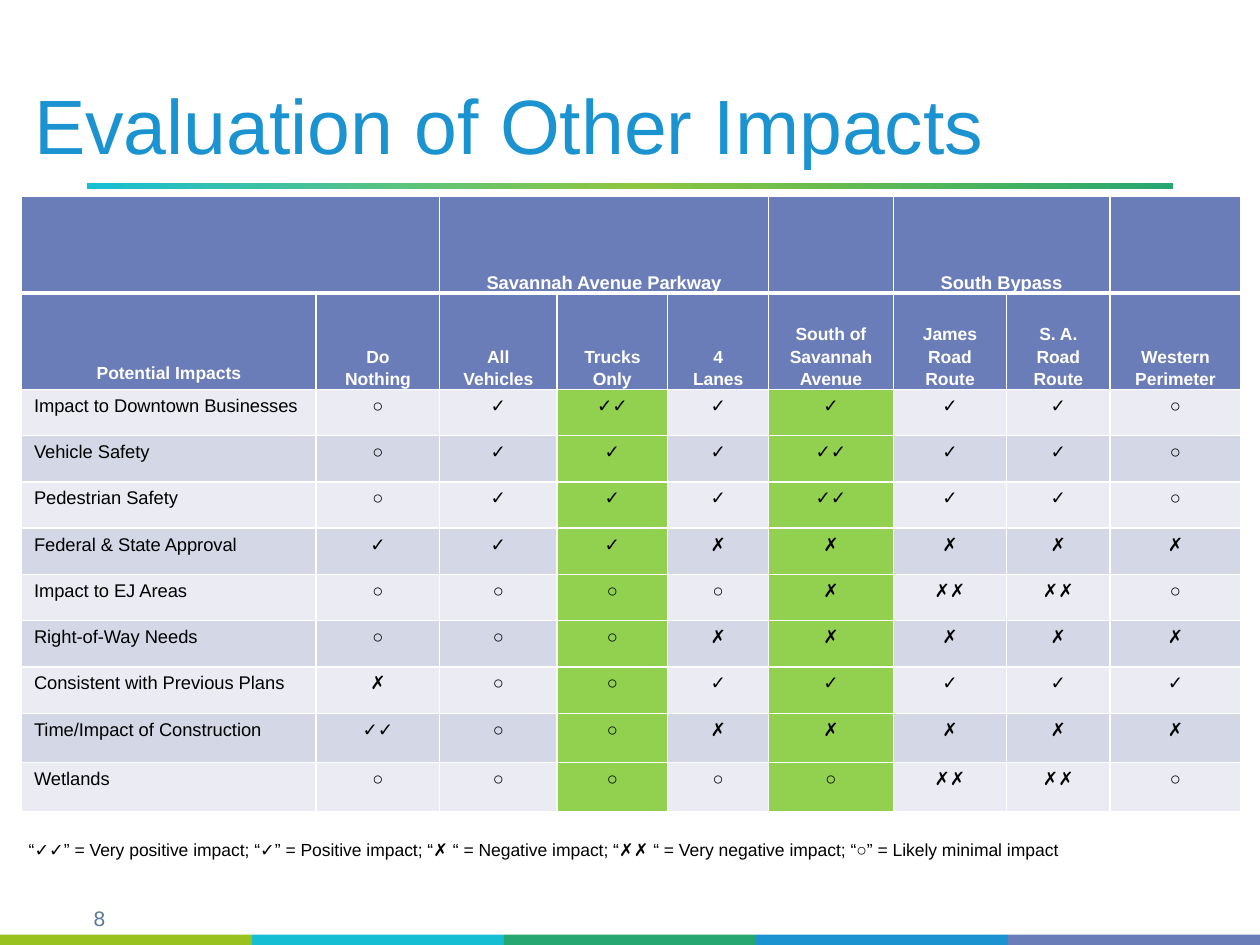
from copy import deepcopy
from dataclasses import dataclass

from pptx import Presentation
from pptx.dml.color import RGBColor
from pptx.enum.shapes import MSO_SHAPE
from pptx.enum.text import MSO_ANCHOR, MSO_AUTO_SIZE, PP_ALIGN
from pptx.oxml import parse_xml
from pptx.oxml.ns import nsdecls, qn
from pptx.util import Inches, Pt

RECTANGLE = MSO_SHAPE.RECTANGLE
TOP, BOTTOM = MSO_ANCHOR.TOP, MSO_ANCHOR.BOTTOM
LEFT, CENTER = PP_ALIGN.LEFT, PP_ALIGN.CENTER
NO_FIT = MSO_AUTO_SIZE.NONE
PAGE_WIDTH, PAGE_HEIGHT = Inches(10), Inches(7.5)


@dataclass(frozen=True)
class Theme:
    font: str = "Arial"
    title: str = "1C93D1"
    header: str = "6B7DB8"
    bands: tuple = ("EBECF3", "D4D7E6")
    highlight: str = "92D050"
    white: str = "FFFFFF"
    ink: str = "000000"
    page_number: str = "597794"
    rule: tuple = ("16BED4", "8DC63F", "26A771")
    footer: tuple = ("98C21F", "16BED4", "26A771", "1C93D1", "6B7DB8")
    title_size: float = 44
    number_size: float = 12
    cell_size: float = 10.5
    small_size: float = 10


THEME = Theme()

# Table grid: column shares of the page width, row shares of its height
COLUMNS = (23.4, 9.8, 9.3, 8.8, 8, 9.9, 9, 8.2, 10.4)
ROWS = (10.2,) * 2 + (4.9,) * 7 + (5.2,) * 2
HIGHLIGHTED = (3, 5)
# First column, last column and text of each cell in the group row
GROUPS = ((0, 1, ""), (2, 4, "Savannah Avenue Parkway"), (5, 5, ""),
          (6, 7, "South Bypass"), (8, 8, ""))
HEADINGS = ("Potential Impacts", "Do Nothing", "All Vehicles", "Trucks Only",
            "4 Lanes", "South of Savannah Avenue", "James Road Route",
            "S. A. Road Route", "Western Perimeter")
RATINGS = {
    "Impact to Downtown Businesses": "○ ✓ ✓✓ ✓ ✓ ✓ ✓ ○",
    "Vehicle Safety": "○ ✓ ✓ ✓ ✓✓ ✓ ✓ ○",
    "Pedestrian Safety": "○ ✓ ✓ ✓ ✓✓ ✓ ✓ ○",
    "Federal & State Approval": "✓ ✓ ✓ ✗ ✗ ✗ ✗ ✗",
    "Impact to EJ Areas": "○ ○ ○ ○ ✗ ✗✗ ✗✗ ○",
    "Right-of-Way Needs": "○ ○ ○ ✗ ✗ ✗ ✗ ✗",
    "Consistent with Previous Plans": "✗ ○ ○ ✓ ✓ ✓ ✓ ✓",
    "Time/Impact of Construction": "✓✓ ○ ○ ✗ ✗ ✗ ✗ ✗",
    "Wetlands": "○ ○ ○ ○ ○ ✗✗ ✗✗ ○",
}
LEGEND = ("“✓✓” = Very positive impact; “✓” = Positive impact; "
          "“✗ “ = Negative impact; “✗✗ “ = Very negative impact; "
          "“○” = Likely minimal impact")


def across(share):
    return round(PAGE_WIDTH * share / 100)


def down(share):
    return round(PAGE_HEIGHT * share / 100)


def area(left, top, width, height):
    """Turn shares of the page (in percent) into a position and size."""
    return across(left), down(top), across(width), down(height)


def apply(target, values):
    for name, value in values.items():
        setattr(target, name, value)


def write(frame, text, size, color, bold=False, align=LEFT, spacing=None):
    para = frame.paragraphs[0]
    apply(para, {"alignment": align, "line_spacing": spacing})
    span = para.add_run()
    span.text = text
    apply(span.font, {"name": THEME.font, "size": Pt(size), "bold": bold})
    span.font.color.rgb = RGBColor.from_string(color)
    return para


def add_title(page, text):
    title = page.shapes.title
    apply(title, dict(zip(("left", "top", "width", "height"),
                          area(1.7, 1.47, 96.8, 17.33))))
    apply(title.text_frame, {"vertical_anchor": BOTTOM, "auto_size": NO_FIT,
                             "word_wrap": True})
    write(title.text_frame, text, THEME.title_size, THEME.title, spacing=0.9)


def add_text(page, place, text, size, color, **layout):
    box = page.shapes.add_textbox(*place)
    box.text_frame.word_wrap = True
    return write(box.text_frame, text, size, color, **layout)


def add_bar(page, place, colors):
    """Draw a bar in one colour, or with an even gradient over several."""
    bar = page.shapes.add_shape(RECTANGLE, *place)
    bar.shadow.inherit = False
    bar.line.fill.background()
    if len(colors) == 1:
        bar.fill.solid()
        bar.fill.fore_color.rgb = RGBColor.from_string(colors[0])
        return
    bar.fill.gradient()
    bar.fill.gradient_angle = 0
    first = next(bar._element.spPr.iter(qn("a:gs")))
    for _ in colors[2:]:
        first.addnext(deepcopy(first))
    for index, (stop, color) in enumerate(zip(bar.fill.gradient_stops, colors)):
        stop.position = index / (len(colors) - 1)
        stop.color.rgb = RGBColor.from_string(color)


def style_cell(cell, fill, widths):
    """Set the fill and the white borders; widths maps a side to points."""
    properties = cell._tc.get_or_add_tcPr()
    for side in "LRTB":
        properties.append(parse_xml(
            f'<a:ln{side} {nsdecls("a")} w="{Pt(widths.get(side, 1))}">'
            f'<a:solidFill><a:srgbClr val="{THEME.white}"/></a:solidFill>'
            f'</a:ln{side}>'))
    cell.fill.solid()
    cell.fill.fore_color.rgb = RGBColor.from_string(fill)


def fill_header(cell, text, size, tight=True):
    """Write a header; tight cells sit on the bottom edge of their row."""
    cell.vertical_anchor = BOTTOM
    if tight:
        apply(cell, {"margin_left": Inches(0.15), "margin_right": Inches(0.15),
                     "margin_top": 0, "margin_bottom": 0})
    if text:
        write(cell.text_frame, text, size, THEME.white, bold=True,
              align=CENTER, spacing=1.15 if tight else None)


def add_impact_table(page):
    frame = page.shapes.add_table(len(ROWS), len(COLUMNS),
                                  *area(1.7, 20.8, sum(COLUMNS), sum(ROWS)))
    table = frame.table
    apply(table, {"first_row": False, "horz_banding": False})
    for column, share in zip(table.columns, COLUMNS):
        column.width = across(share)
    for row, share in zip(table.rows, ROWS):
        row.height = down(share)

    # Group row and heading row, parted by a thick line
    for index, heading in enumerate(HEADINGS):
        style_cell(table.cell(0, index), THEME.header, {"B": 3})
        style_cell(table.cell(1, index), THEME.header, {"T": 3})
        fill_header(table.cell(1, index), heading, THEME.small_size,
                    tight=index > 0)
    for first, last, text in GROUPS:
        cell = table.cell(0, first)
        if last > first:
            cell.merge(table.cell(0, last))
        fill_header(cell, text, THEME.cell_size)

    # Banded ratings with the favoured options highlighted
    for number, (impact, marks) in enumerate(RATINGS.items()):
        for index, text in enumerate([impact, *marks.split()]):
            cell = table.cell(number + 2, index)
            favoured = index in HIGHLIGHTED
            style_cell(cell, THEME.highlight if favoured
                       else THEME.bands[number % 2], {})
            cell.vertical_anchor = TOP
            write(cell.text_frame, text, THEME.cell_size, THEME.ink,
                  align=CENTER if index else LEFT)


def add_legend(page):
    para = add_text(page, area(-1.7, 87.73, 92.7, 4), LEGEND,
                    THEME.small_size, THEME.ink, spacing=1.2)
    indents = para._p.get_or_add_pPr()
    indents.set("marL", str(Inches(0.9)))
    indents.set("indent", str(Inches(-0.6)))


def main():
    deck = Presentation()
    apply(deck, {"slide_width": PAGE_WIDTH, "slide_height": PAGE_HEIGHT})
    page = deck.slides.add_slide(deck.slide_layouts[5])

    # Page furniture
    add_text(page, area(5.5, 95.2, 4.8, 4), "8", THEME.number_size,
             THEME.page_number, align=CENTER)
    add_bar(page, area(6.9, 19.33, 86.2, 0.67), THEME.rule)
    share = 100 / len(THEME.footer)
    for index, color in enumerate(THEME.footer):
        add_bar(page, area(index * share, 98.9, share, 1.1), (color,))

    # Content
    add_title(page, "Evaluation of Other Impacts")
    add_impact_table(page)
    add_legend(page)
    deck.save("out.pptx")


if __name__ == "__main__":
    main()
